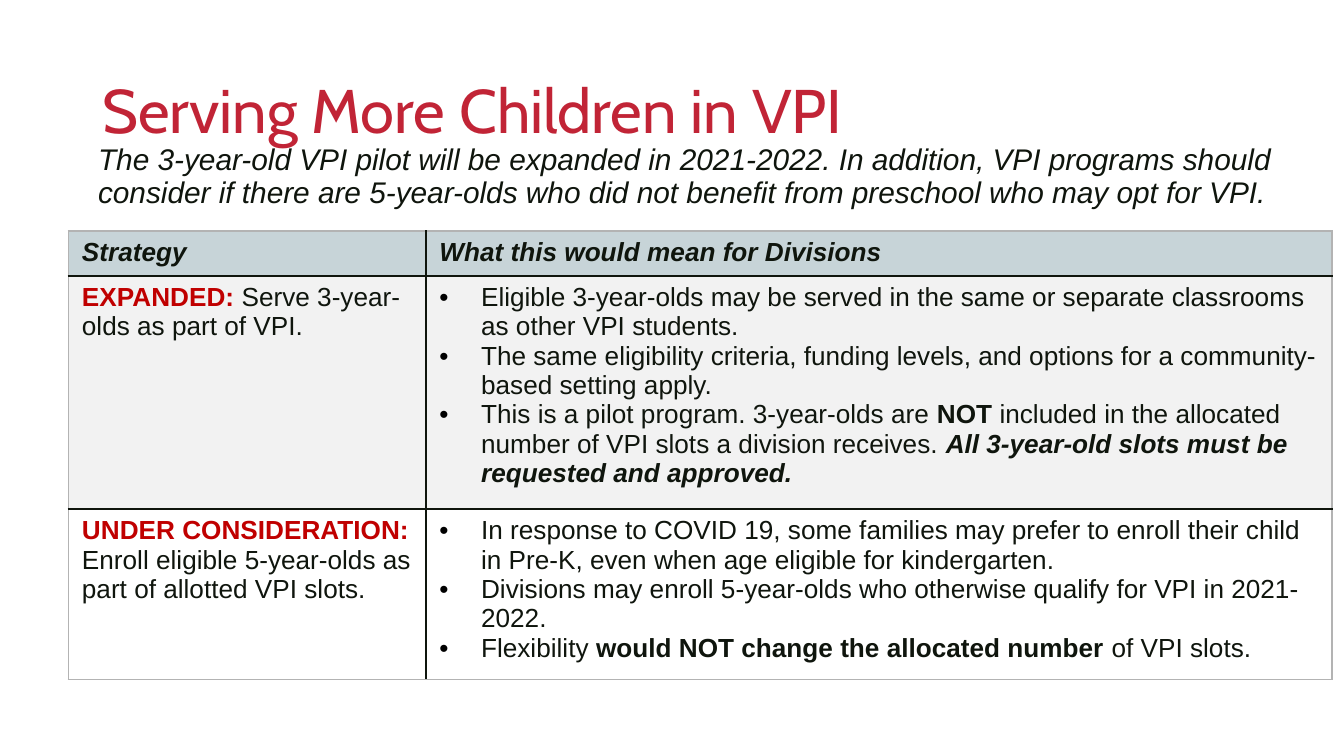
from lxml import etree
from pptx import Presentation
from pptx.dml.color import RGBColor
from pptx.enum.text import MSO_ANCHOR
from pptx.oxml.ns import qn
from pptx.util import Inches, Pt

MIDDLE = MSO_ANCHOR.MIDDLE
TOP = MSO_ANCHOR.TOP

CRIMSON = RGBColor(0xC1, 0x24, 0x36)
INK = RGBColor(0x0F, 0x15, 0x0D)
RED = RGBColor(0xC0, 0x00, 0x00)
BLACK = RGBColor(0x00, 0x00, 0x00)
HEADER_FILL = RGBColor(0xC7, 0xD4, 0xD8)
BAND_FILL = RGBColor(0xF2, 0xF2, 0xF2)
WHITE = RGBColor(0xFF, 0xFF, 0xFF)
FRAME_GREY = RGBColor(0xB3, 0xB3, 0xB3)

TITLE = "Serving More Children in VPI"
INTRO = (
    "The 3-year-old VPI pilot will be expanded in 2021-2022. In addition, VPI programs should "
    "consider if there are 5-year-olds who did not benefit from preschool who may opt for VPI."
)
HEADERS = ["Strategy", "What this would mean for Divisions"]
STRATEGIES = [
    (
        "EXPANDED: ",
        "Serve 3-year-olds as part of VPI.",
        [
            [("Eligible 3-year-olds may be served in the same or separate classrooms "
              "as other VPI students.", "")],
            [("The same eligibility criteria, funding levels, and options for a "
              "community-based setting apply.", "")],
            [("This is a pilot program. 3-year-olds are ", ""),
             ("NOT", "b"),
             (" included in the allocated number of VPI slots a division receives. ", ""),
             ("All 3-year-old slots must be requested and approved.", "bi")],
        ],
        BAND_FILL,
    ),
    (
        "UNDER CONSIDERATION: ",
        "Enroll eligible 5-year-olds as part of allotted VPI slots.",
        [
            [("In response to COVID 19, some families may prefer to enroll their child "
              "in Pre-K, even when age eligible for kindergarten.", "")],
            [("Divisions may enroll 5-year-olds who otherwise qualify for VPI in "
              "2021-2022.", "")],
            [("Flexibility ", ""),
             ("would NOT change the allocated number ", "b"),
             ("of VPI slots.", "")],
        ],
        WHITE,
    ),
]
COLUMN_WIDTHS = [2.66, 6.74]
ROW_HEIGHTS = [0.14, 0.84, 0.68]


def add_run(para, text, size=14, style="", color=INK, font="Arial"):
    span = para.add_run()
    span.text = text
    span.font.name = font
    span.font.size = Pt(size)
    span.font.bold = "b" in style
    span.font.italic = "i" in style
    span.font.color.rgb = color


def set_indent(para, left, first):
    properties = para._p.get_or_add_pPr()
    properties.set("marL", str(Inches(left)))
    properties.set("indent", str(Inches(first)))
    return properties


def add_bullet(para):
    properties = set_indent(para, 0.31, -0.31)
    color = etree.SubElement(properties, qn("a:buClr"))
    etree.SubElement(color, qn("a:srgbClr"), val=str(BLACK))
    etree.SubElement(properties, qn("a:buFont"), typeface="Arial")
    etree.SubElement(properties, qn("a:buChar"), char="•")


def add_text_box(page, left, top, width, height, anchor):
    box = page.shapes.add_textbox(Inches(left), Inches(top), Inches(width), Inches(height))
    frame = box.text_frame
    frame.word_wrap = True
    frame.vertical_anchor = anchor
    frame.margin_left = frame.margin_right = Inches(0.07)
    frame.margin_top = frame.margin_bottom = Inches(0.04)
    para = frame.paragraphs[0]
    para.line_spacing = 0.9
    return para


def add_title(page, left, top, width, height):
    para = add_text_box(page, left, top, width, height, MIDDLE)
    add_run(para, TITLE, 33, color=CRIMSON, font="Cabin")


def add_intro(page, left, top, width, height):
    para = add_text_box(page, left, top, width, height, TOP)
    set_indent(para, 0.15, 0)
    add_run(para, INTRO, 16, "i")


def style_cell(cell, row, column, fill):
    properties = cell._tc.get_or_add_tcPr()
    outer_edges = {
        "a:lnL": column == 0,
        "a:lnR": column == len(COLUMN_WIDTHS) - 1,
        "a:lnT": row == 0,
        "a:lnB": row == len(ROW_HEIGHTS) - 1,
    }
    for tag, is_outer in outer_edges.items():
        line = etree.SubElement(properties, qn(tag), w=str(Pt(1)))
        paint = etree.SubElement(line, qn("a:solidFill"))
        color = FRAME_GREY if is_outer else INK
        etree.SubElement(paint, qn("a:srgbClr"), val=str(color))
    cell.fill.solid()
    cell.fill.fore_color.rgb = fill


def add_strategy_table(page, left, top, width, height):
    box = page.shapes.add_table(
        len(ROW_HEIGHTS), len(COLUMN_WIDTHS),
        Inches(left), Inches(top), Inches(width), Inches(height),
    )
    table = box.table
    for column, column_width in zip(table.columns, COLUMN_WIDTHS):
        column.width = Inches(column_width)
    for row, row_height in zip(table.rows, ROW_HEIGHTS):
        row.height = Inches(row_height)
    box.height = Inches(height)

    fills = [HEADER_FILL] + [strategy[-1] for strategy in STRATEGIES]
    for row, fill in enumerate(fills):
        for column in range(len(COLUMN_WIDTHS)):
            style_cell(table.cell(row, column), row, column, fill)

    for column, header in enumerate(HEADERS):
        add_run(table.cell(0, column).text_frame.paragraphs[0], header, style="bi")

    for row, (status, summary, bullets, _) in enumerate(STRATEGIES, 1):
        para = table.cell(row, 0).text_frame.paragraphs[0]
        add_run(para, status, style="b", color=RED)
        add_run(para, summary)
        frame = table.cell(row, 1).text_frame
        for index, spans in enumerate(bullets):
            para = frame.add_paragraph() if index else frame.paragraphs[0]
            add_bullet(para)
            for text, style in spans:
                add_run(para, text, style=style)


def main():
    deck = Presentation()
    deck.slide_width = Inches(10)
    deck.slide_height = deck.slide_width * 9 // 16
    page = deck.slides.add_slide(deck.slide_layouts[6])
    add_title(page, 0.69, 0.3, 8.62, 1.09)
    add_intro(page, 0.51, 1.04, 9.4, 3.57)
    add_strategy_table(page, 0.51, 1.72, 9.4, 3.33)
    deck.save("out.pptx")


if __name__ == "__main__":
    main()
